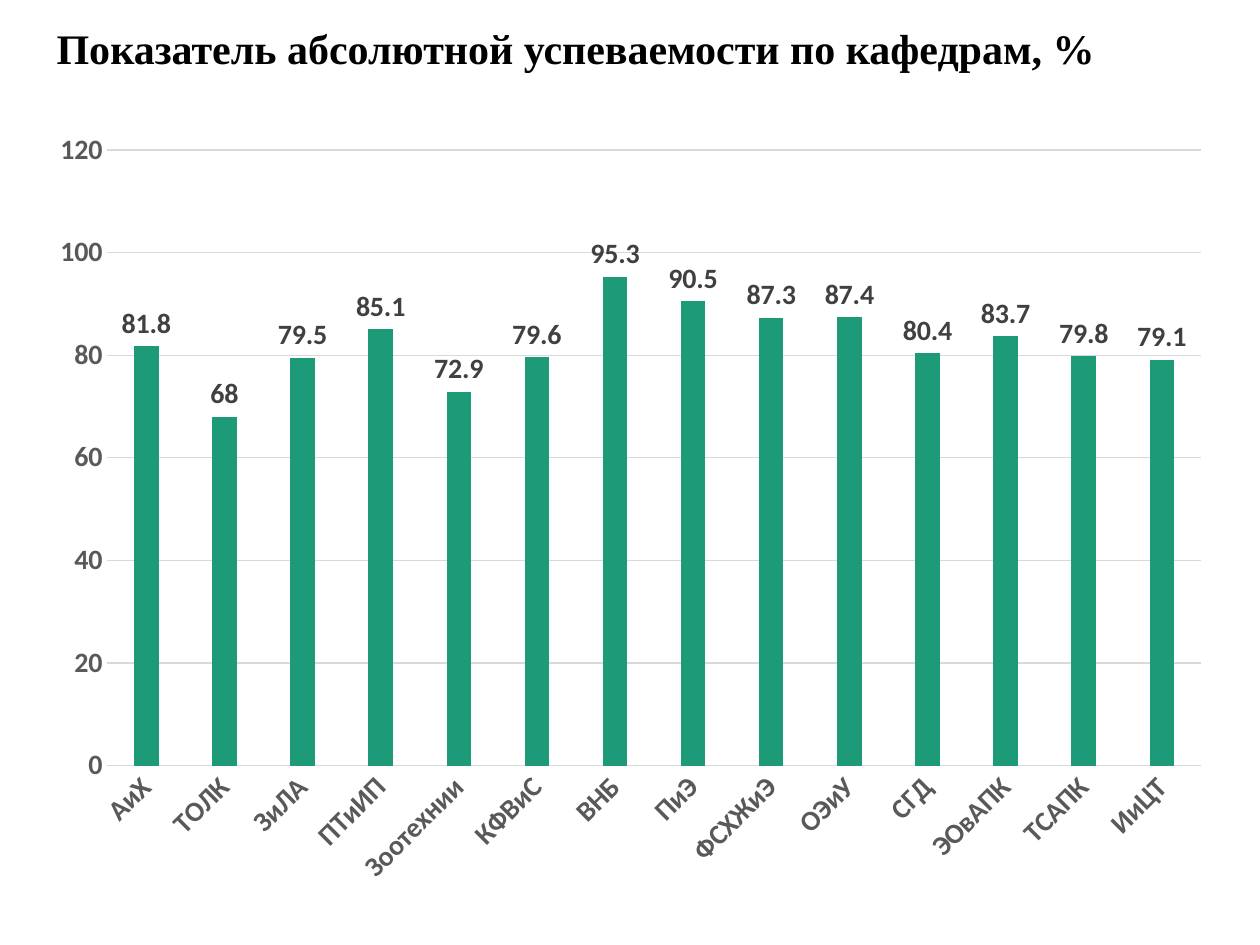
import dataclasses
import typing

import pptx
import pptx.chart.data
import pptx.dml.color
import pptx.enum.chart
import pptx.enum.text
import pptx.util

Inches = pptx.util.Inches
Pt = pptx.util.Pt
RGB = pptx.dml.color.RGBColor


@dataclasses.dataclass(frozen=True)
class Theme:
    title_font: str = "Times New Roman"
    chart_font: str = "Calibri"
    title_size: int = 24
    chart_size: int = 16
    title: str = "000000"
    axis: str = "595959"
    label: str = "404040"
    grid: str = "D9D9D9"
    bar: str = "1D9A78"


class Department(typing.NamedTuple):
    name: str
    rate: float


THEME = Theme()
DEPARTMENTS = [
    Department("АиХ", 81.8),
    Department("ТОЛК", 68),
    Department("ЗиЛА", 79.5),
    Department("ПТиИП", 85.1),
    Department("Зоотехнии", 72.9),
    Department("КФВиС", 79.6),
    Department("ВНБ", 95.3),
    Department("ПиЭ", 90.5),
    Department("ФСХЖиЭ", 87.3),
    Department("ОЭиУ", 87.4),
    Department("СГД", 80.4),
    Department("ЭОвАПК", 83.7),
    Department("ТСАПК", 79.8),
    Department("ИиЦТ", 79.1),
]


def set_font(font, name: str, size: int, color: str, bold: bool = True) -> None:
    font.name = name
    font.size = Pt(size)
    font.bold = bold
    font.color.rgb = RGB.from_string(color)


def set_line(line, color: str, width: float = 0.75) -> None:
    line.color.rgb = RGB.from_string(color)
    line.width = Pt(width)


def add_text(s, text: str, *, left: float, top: float, width: float, height: float,
             font: str, size: int, color: str) -> None:
    sp = s.shapes.add_textbox(Inches(left), Inches(top), Inches(width), Inches(height))
    tf = sp.text_frame
    tf.word_wrap = True
    tf.vertical_anchor = pptx.enum.text.MSO_ANCHOR.TOP
    p = tf.paragraphs[0]
    p.alignment = pptx.enum.text.PP_ALIGN.CENTER
    r = p.add_run()
    r.text = text
    set_font(r.font, font, size, color)


def add_rate_chart(s, departments: list[Department]) -> None:
    data = pptx.chart.data.CategoryChartData(number_format="General")
    data.categories = [d.name for d in departments]
    data.add_series("Series 1", [d.rate for d in departments])
    chart = s.shapes.add_chart(
        pptx.enum.chart.XL_CHART_TYPE.COLUMN_CLUSTERED,
        Inches(0.29), Inches(0.93), Inches(9.43), Inches(6.21), data,
    ).chart
    chart.has_legend = False
    chart.has_title = False
    set_font(chart.font, THEME.chart_font, THEME.chart_size, THEME.title)

    for axis in (chart.category_axis, chart.value_axis):
        axis.major_tick_mark = pptx.enum.chart.XL_TICK_MARK.NONE
        axis.minor_tick_mark = pptx.enum.chart.XL_TICK_MARK.NONE
        set_font(axis.tick_labels.font, THEME.chart_font, THEME.chart_size, THEME.axis)
    set_line(chart.category_axis.format.line, THEME.grid)
    body = chart.category_axis._element.find(".//" + pptx.oxml.ns.qn("a:bodyPr"))
    body.set("rot", "-2700000")
    body.set("vert", "horz")

    values = chart.value_axis
    values.minimum_scale, values.maximum_scale, values.major_unit = 0, 120, 20
    values.format.line.fill.background()
    values.has_major_gridlines = True
    set_line(values.major_gridlines.format.line, THEME.grid)

    plot = chart.plots[0]
    plot.gap_width = 219
    plot.overlap = -27
    plot.vary_by_categories = False
    fill = plot.series[0].format.fill
    fill.solid()
    fill.fore_color.rgb = RGB.from_string(THEME.bar)
    labels = plot.series[0].data_labels
    labels.show_value = True
    labels.position = pptx.enum.chart.XL_LABEL_POSITION.OUTSIDE_END
    set_font(labels.font, THEME.chart_font, THEME.chart_size, THEME.label)


def main() -> None:
    prs = pptx.Presentation()
    prs.slide_width, prs.slide_height = Inches(10), Inches(7.5)
    s = prs.slides.add_slide(prs.slide_layouts[6])
    add_text(s, "Показатель абсолютной успеваемости по кафедрам, %",
             left=0.28, top=0.13, width=8.58, height=0.8,
             font=THEME.title_font, size=THEME.title_size, color=THEME.title)
    add_rate_chart(s, DEPARTMENTS)
    prs.save("out.pptx")


if __name__ == "__main__":
    main()
